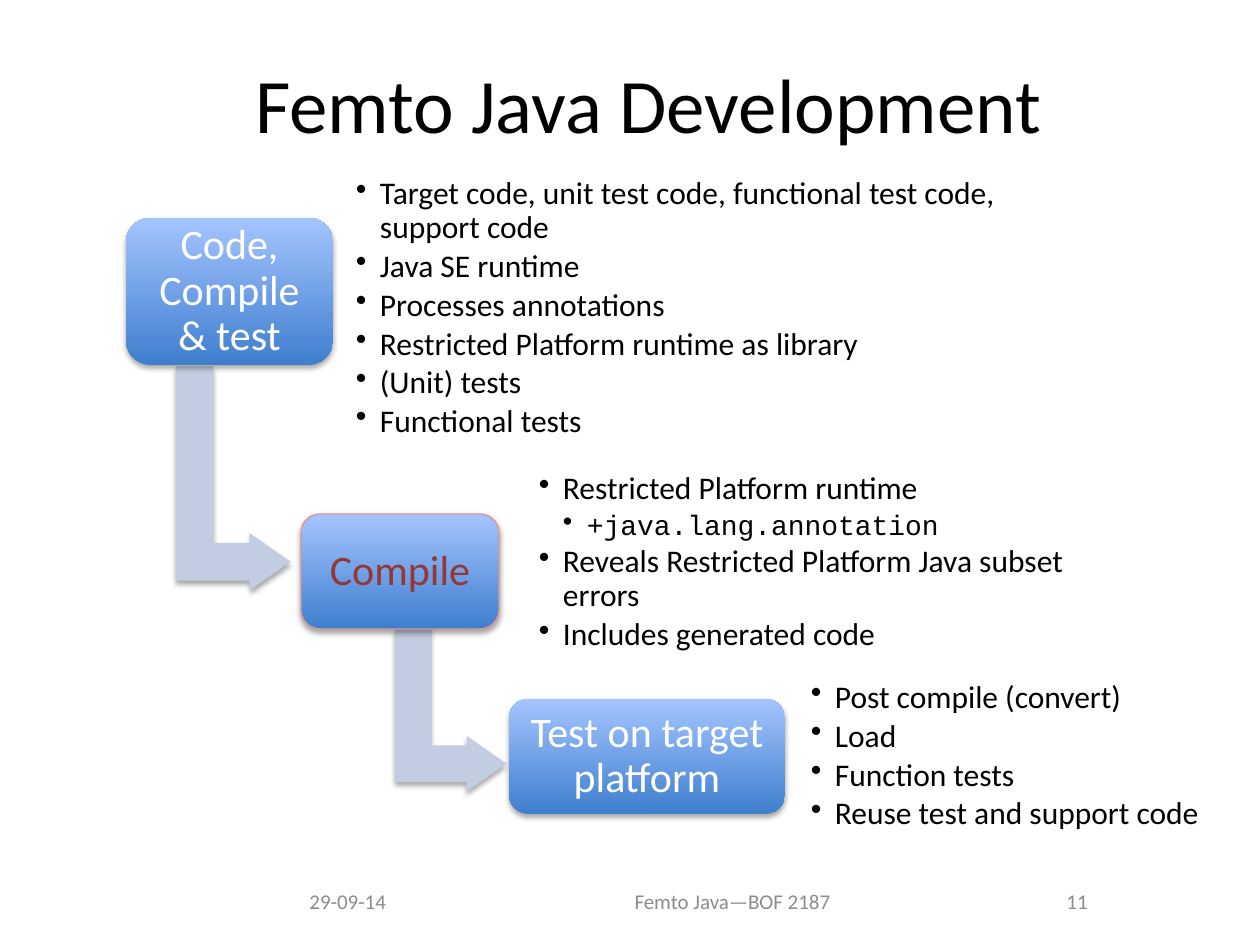
from dataclasses import dataclass

import pptx
import pptx.dml.color
import pptx.enum.shapes
import pptx.enum.text
import pptx.oxml.ns
import pptx.util
from lxml import etree

RGB = pptx.dml.color.RGBColor
ALIGN = pptx.enum.text.PP_ALIGN
SHAPE = pptx.enum.shapes.MSO_SHAPE

BLACK = RGB(0x00, 0x00, 0x00)
WHITE = RGB(0xFF, 0xFF, 0xFF)
GRAY = RGB(0x8C, 0x8C, 0x8C)
DARK_RED = RGB(0x95, 0x37, 0x35)
PINK = RGB(0xD9, 0x96, 0x94)
ARROW_BLUE = RGB(0xC2, 0xCD, 0xE1)
BOX_BOTTOM = RGB(0x3F, 0x7F, 0xCE)
BOX_TOP = RGB(0xA4, 0xC4, 0xFF)

BODY_FONT = "Calibri"
CODE_FONT = "Courier New"
EMU_PER_PX = 914400 / 126
BULLET_INDENT = 24


@dataclass(frozen=True)
class Rect:
    x: int
    y: int
    w: int
    h: int

    def emu(self) -> tuple:
        return tuple(px(v) for v in (self.x, self.y, self.w, self.h))


@dataclass(frozen=True)
class Bullet:
    text: str
    level: int = 1
    size: int = 18
    font: str = BODY_FONT


@dataclass(frozen=True)
class Step:
    label: str
    box: Rect
    notes: Rect
    bullets: tuple
    color: RGB = WHITE
    outline: RGB | None = None
    arrow: Rect | None = None  # frame before the quarter turn


STEPS = (
    Step("Code, Compile & test", Rect(126, 218, 207, 147), Rect(347, 197, 708, 223),
         (Bullet("Target code, unit test code, functional test code, support code"),
          Bullet("Java SE runtime"),
          Bullet("Processes annotations"),
          Bullet("Restricted Platform runtime as library"),
          Bullet("(Unit) tests"),
          Bullet("Functional tests")),
         arrow=Rect(121, 421, 224, 115)),
    Step("Compile", Rect(301, 514, 198, 115), Rect(530, 471, 617, 183),
         (Bullet("Restricted Platform runtime"),
          Bullet("+java.lang.annotation", level=2, size=16, font=CODE_FONT),
          Bullet("Reveals Restricted Platform Java subset errors"),
          Bullet("Includes generated code")),
         color=DARK_RED, outline=PINK, arrow=Rect(369, 654, 164, 111)),
    Step("Test on target platform", Rect(509, 699, 276, 115), Rect(802, 699, 416, 115),
         (Bullet("Post compile (convert)"),
          Bullet("Load"),
          Bullet("Function tests"),
          Bullet("Reuse test and support code"))),
)

FOOTERS = (
    ("29-09-14", Rect(297, 876, 270, 50), ALIGN.LEFT),
    ("Femto Java—BOF 2187", Rect(577, 876, 311, 50), ALIGN.CENTER),
    ("11", Rect(905, 876, 195, 50), ALIGN.RIGHT),
)


def px(value: int) -> int:
    return round(value * EMU_PER_PX)


def write(p, text: str, *, size: int, color: RGB = BLACK, font: str = BODY_FONT,
          align=ALIGN.LEFT, line_spacing: float | None = None) -> None:
    p.alignment = align
    if line_spacing:
        p.line_spacing = line_spacing
    r = p.add_run()
    r.text = text
    r.font.size = pptx.util.Pt(size)
    r.font.name = font
    r.font.color.rgb = color


def setup_frame(sp, inset: int | None = None):
    tf = sp.text_frame
    tf.word_wrap = True
    tf.vertical_anchor = pptx.enum.text.MSO_ANCHOR.MIDDLE
    if inset is not None:
        tf.margin_left = tf.margin_right = px(inset)
        tf.margin_top = tf.margin_bottom = px(inset)
    return tf


def add_shadow(sp) -> None:
    sp.shadow.inherit = False
    effects = sp._element.spPr.find(pptx.oxml.ns.qn("a:effectLst"))
    shadow = etree.SubElement(effects, pptx.oxml.ns.qn("a:outerShdw"), blurRad="40000",
                              dist="23000", dir="5400000", rotWithShape="0")
    black = etree.SubElement(shadow, pptx.oxml.ns.qn("a:srgbClr"), val="000000")
    etree.SubElement(black, pptx.oxml.ns.qn("a:alpha"), val="35000")


def add_arrow(s, rect: Rect) -> None:
    sp = s.shapes.add_shape(SHAPE.BENT_UP_ARROW, *rect.emu())
    for i, value in enumerate((0.328, 0.25, 0.358)):
        sp.adjustments[i] = value
    sp.rotation = 90
    sp.fill.solid()
    sp.fill.fore_color.rgb = ARROW_BLUE
    sp.line.fill.background()
    add_shadow(sp)


def add_box(s, step: Step) -> None:
    sp = s.shapes.add_shape(SHAPE.ROUNDED_RECTANGLE, *step.box.emu())
    sp.fill.gradient()
    sp.fill.gradient_angle = 90
    for stop, color in zip(sp.fill.gradient_stops, (BOX_BOTTOM, BOX_TOP)):
        stop.color.rgb = color
    if step.outline:
        sp.line.color.rgb = step.outline
        sp.line.width = pptx.util.Pt(0.75)
    else:
        sp.line.fill.background()
    add_shadow(sp)
    write(setup_frame(sp, 12).paragraphs[0], step.label, size=24, color=step.color,
          align=ALIGN.CENTER, line_spacing=0.9)


def add_bullets(s, rect: Rect, bullets: tuple) -> None:
    tf = setup_frame(s.shapes.add_textbox(*rect.emu()), 9)
    for i, bullet in enumerate(bullets):
        p = tf.add_paragraph() if i else tf.paragraphs[0]
        pPr = p._p.get_or_add_pPr()
        pPr.set("marL", str(px(BULLET_INDENT * bullet.level)))
        pPr.set("indent", str(-px(BULLET_INDENT)))
        etree.SubElement(pPr, pptx.oxml.ns.qn("a:buChar"), char="•")
        p.level = bullet.level
        p.space_after = pptx.util.Pt(bullet.size * 0.15)
        write(p, bullet.text, size=bullet.size, font=bullet.font, line_spacing=0.9)


def main() -> None:
    prs = pptx.Presentation()
    prs.slide_width, prs.slide_height = px(1260), px(945)
    s = prs.slides.add_slide(prs.slide_layouts[5])

    # Title
    title = s.shapes.title
    title.left, title.top, title.width, title.height = Rect(100, 38, 1097, 130).emu()
    write(setup_frame(title).paragraphs[0], "Femto Java Development", size=44,
          align=ALIGN.CENTER)

    # Steps, each with its arrow to the next one
    for step in STEPS:
        if step.arrow:
            add_arrow(s, step.arrow)
        add_box(s, step)
        add_bullets(s, step.notes, step.bullets)

    # Footer
    for text, rect, align in FOOTERS:
        tf = setup_frame(s.shapes.add_textbox(*rect.emu()))
        write(tf.paragraphs[0], text, size=12, color=GRAY, align=align)

    prs.save("out.pptx")


if __name__ == "__main__":
    main()
